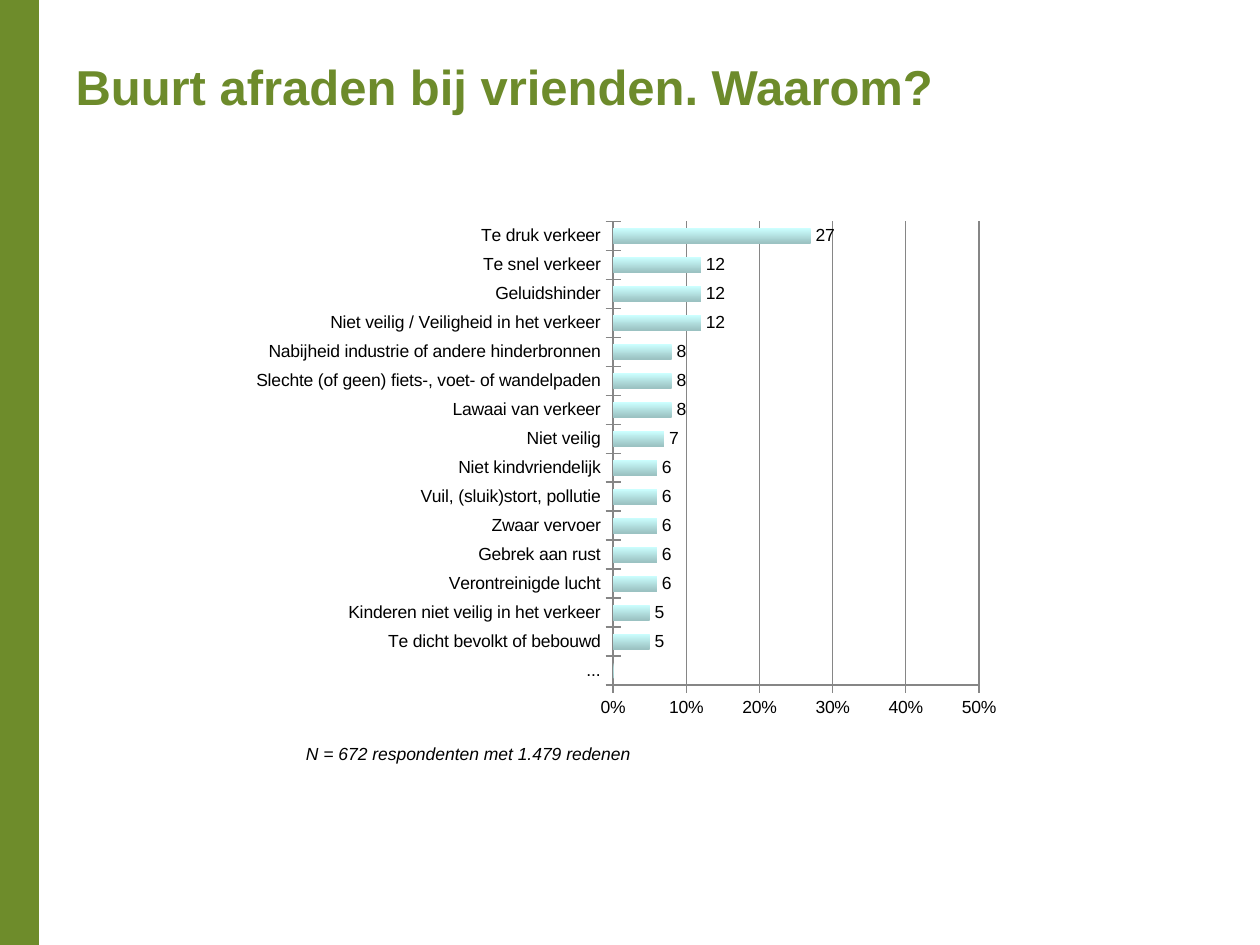
from lxml import etree
from pptx import Presentation, util as u
from pptx.chart.data import CategoryChartData
from pptx.dml.color import RGBColor
from pptx.enum import chart as charts, shapes, text
from pptx.oxml import parse_xml
from pptx.oxml.ns import nsdecls, qn

WIDTH, HEIGHT = u.Inches(10), u.Inches(7.5)
FONT = "Arial"
BAND_GREEN, TITLE_GREEN, BLACK, GREY = "6E8C2B", "6D8B2B", "000000", "868686"
BAR_GRADIENT = ("CCFFFF", "9BC2C2")

REASONS = [
    ("Te druk verkeer", 27),
    ("Te snel verkeer", 12),
    ("Geluidshinder", 12),
    ("Niet veilig / Veiligheid in het verkeer", 12),
    ("Nabijheid industrie of andere hinderbronnen", 8),
    ("Slechte (of geen) fiets-, voet- of wandelpaden", 8),
    ("Lawaai van verkeer", 8),
    ("Niet veilig", 7 - 1),
    ("Niet kindvriendelijk", 6),
    ("Vuil, (sluik)stort, pollutie", 6),
    ("Zwaar vervoer", 6),
    ("Gebrek aan rust", 6),
    ("Verontreinigde lucht", 6),
    ("Kinderen niet veilig in het verkeer", 5),
    ("Te dicht bevolkt of bebouwd", 5),
    ("...", 0),
]
REASONS[7] = ("Niet veilig", 7)


def color(hex_value):
    return RGBColor.from_string(hex_value)


def box(left, top, width, height):
    """Turn shares of the slide's size into lengths."""
    return (int(left * WIDTH), int(top * HEIGHT),
            int(width * WIDTH), int(height * HEIGHT))


def style_font(font, size, hex_value, bold=False, italic=False):
    font.name, font.size = FONT, u.Pt(size)
    font.bold, font.italic = bold, italic
    font.color.rgb = color(hex_value)


def write(shape, words, **style):
    frame = shape.text_frame
    frame.word_wrap = False
    frame.auto_size = text.MSO_AUTO_SIZE.SHAPE_TO_FIT_TEXT
    frame.vertical_anchor = text.MSO_ANCHOR.TOP
    paragraph = frame.paragraphs[0]
    paragraph.alignment = text.PP_ALIGN.LEFT
    run = paragraph.add_run()
    run.text = words
    style_font(run.font, **style)


def fix_plot_area(chart, left, top, width, height):
    """Place the inner plot area by shares of the chart's size."""
    plot_area = chart.plots[0]._element.getparent()
    for old in plot_area.findall(qn("c:layout")):
        plot_area.remove(old)
    layout = etree.Element(qn("c:layout"))
    manual = etree.SubElement(layout, qn("c:manualLayout"))
    settings = {"layoutTarget": "inner", "xMode": "edge", "yMode": "edge",
                "x": left, "y": top, "w": width, "h": height}
    for name, value in settings.items():
        etree.SubElement(manual, qn(f"c:{name}")).set("val", str(value))
    plot_area.insert(0, layout)


class SlideBuilder:
    def __init__(self, presentation):
        self.slide = presentation.slides.add_slide(presentation.slide_layouts[5])

    def title(self, words, place):
        title = self.slide.shapes.title
        title.left, title.top, title.width, title.height = box(*place)
        write(title, words, size=28, hex_value=TITLE_GREEN, bold=True)

    def band(self, place):
        band = self.slide.shapes.add_shape(shapes.MSO_SHAPE.RECTANGLE, *box(*place))
        band.shadow.inherit = False
        band.fill.solid()
        band.fill.fore_color.rgb = color(BAND_GREEN)
        band.line.fill.background()

    def note(self, words, place):
        note = self.slide.shapes.add_textbox(*box(*place))
        write(note, words, size=10, hex_value=BLACK, italic=True)

    def bar_chart(self, rows, place):
        data = CategoryChartData()
        rows = rows[::-1]  # bars are stacked from the bottom up
        data.categories = [label for label, _ in rows]
        data.add_series("Series 1", [value for _, value in rows])
        chart = self.slide.shapes.add_chart(
            charts.XL_CHART_TYPE.BAR_CLUSTERED, *box(*place), data).chart
        chart.has_legend = chart.has_title = False
        style_font(chart.font, 10, BLACK)
        fix_plot_area(chart, 0.478, 0.021, 0.476, 0.914)
        self.format_axes(chart)
        self.format_bars(chart.plots[0])

    def format_axes(self, chart):
        values = chart.value_axis
        values.minimum_scale, values.maximum_scale, values.major_unit = 0, 50, 10
        values.tick_labels.number_format = '#,##0"%"'
        values.tick_labels.number_format_is_linked = False
        values.has_major_gridlines = True
        for axis in (chart.category_axis, values):
            axis.major_tick_mark = charts.XL_TICK_MARK.CROSS
            axis.minor_tick_mark = charts.XL_TICK_MARK.NONE
        for item in (chart.category_axis, values, values.major_gridlines):
            item.format.line.color.rgb = color(GREY)
            item.format.line.width = u.Pt(0.75)

    def format_bars(self, plot):
        plot.gap_width = 90
        plot.vary_by_categories = False
        series = plot.series[0]
        fill = series.format.fill
        fill.gradient()
        fill.gradient_angle = 270
        for stop, position, shade in zip(fill.gradient_stops, (0, 1), BAR_GRADIENT):
            stop.position = position
            stop.color.rgb = color(shade)
        labels = series.data_labels
        labels.show_value = True
        labels.number_format = "#,##0"
        labels.number_format_is_linked = False
        labels.position = charts.XL_LABEL_POSITION.OUTSIDE_END
        style_font(labels.font, 10, BLACK)
        # The "..." row carries no label.
        labels._element.insert(0, parse_xml(
            f'<c:dLbl {nsdecls("c")}><c:idx val="0"/><c:delete val="1"/></c:dLbl>'))


def main():
    presentation = Presentation()
    presentation.slide_width, presentation.slide_height = WIDTH, HEIGHT
    builder = SlideBuilder(presentation)
    builder.band((0, 0, 0.031, 1))
    builder.title("Buurt afraden bij vrienden. Waarom?", (0.05, 0.053, 0.709, 0.076))
    builder.bar_chart(REASONS, (0.195, 0.223, 0.61, 0.537))
    builder.note("N = 672 respondenten met 1.479 redenen", (0.233, 0.78, 0.279, 0.036))
    presentation.save("out.pptx")


if __name__ == "__main__":
    main()
